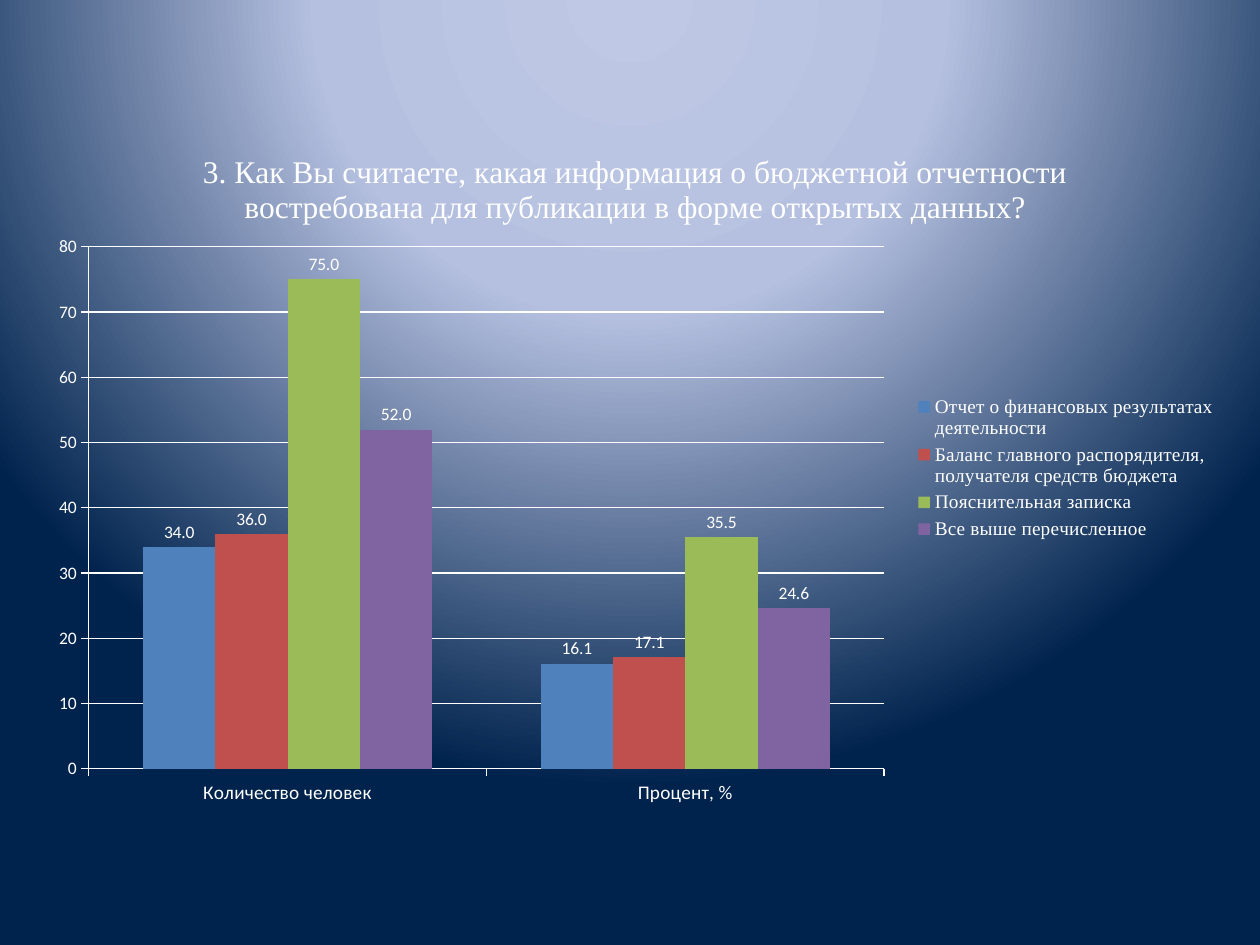
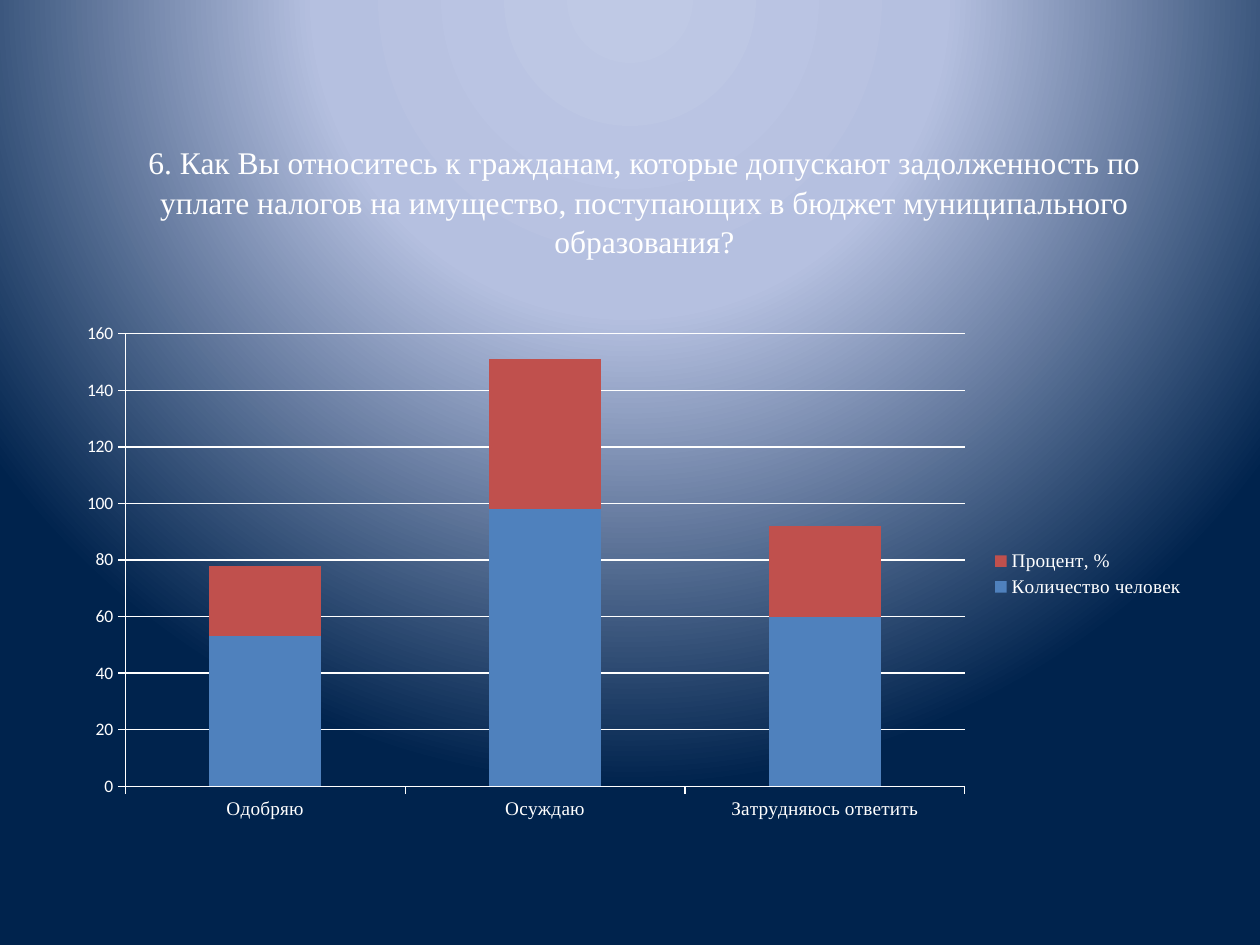
"""Builds two survey result slides with column charts on a radial gradient."""
from pptx import Presentation
from pptx.chart.data import CategoryChartData as Data
from pptx.dml.color import RGBColor as RGB
from pptx.enum.chart import XL_CHART_TYPE as Kind, XL_LABEL_POSITION as Spot
from pptx.enum.chart import XL_LEGEND_POSITION as Side, XL_TICK_MARK as Tick
from pptx.enum.text import MSO_ANCHOR as Anchor, PP_ALIGN as Align
from pptx.oxml import parse_xml
from pptx.oxml.ns import nsdecls, qn
from pptx.util import Inches, Pt

HUE = {"white": "FFFFFF", "glow": "BFC9E5", "mist": "B5C0E0", "navy": "00234D",
       "blue": "4F81BD", "red": "C0504D", "green": "9BBB59", "violet": "8064A2"}
SERIF, SANS = "Times New Roman", "Calibri"


def style(font, size, face):
    font.size, font.name, font.bold = Pt(size), face, False
    font.color.rgb = RGB.from_string(HUE["white"])


def place(node, index, box, inner=False):
    for old in node.findall(qn("c:layout")):
        node.remove(old)
    tags = '<c:layoutTarget val="inner"/>' if inner else ""
    tags += '<c:xMode val="edge"/><c:yMode val="edge"/>'
    tags += "".join(f'<c:{key} val="{val}"/>' for key, val in zip("xywh", box))
    node.insert(index, parse_xml(f'<c:layout {nsdecls("c")}><c:manualLayout>{tags}'
                                 '</c:manualLayout></c:layout>'))


prs = Presentation()
prs.slide_width, prs.slide_height = Inches(10), Inches(7.5)

master = prs.slide_master
master.background.fill.solid()
stops = "".join(f'<a:gs pos="{pos * 1000}"><a:srgbClr val="{HUE[name]}"/></a:gs>'
                for pos, name in ((0, "glow"), (40, "mist"), (100, "navy")))
grad = parse_xml(f'<a:gradFill {nsdecls("a")} rotWithShape="1"><a:gsLst>{stops}</a:gsLst>'
                 '<a:path path="circle"><a:fillToRect l="50000" t="-80000" r="50000" '
                 'b="180000"/></a:path></a:gradFill>')
solid = master.element.find(".//" + qn("p:bgPr")).find(qn("a:solidFill"))
solid.getparent().replace(solid, grad)

polls = [
    {"kind": Kind.COLUMN_CLUSTERED, "at": (0.28, 0.92, 9.45, 5.59),
     "head": "3. Как Вы считаете, какая информация о бюджетной отчетности "
             "востребована для публикации в форме открытых данных?",
     "cats": ["Количество человек", "Процент, %"], "face": SANS,
     "rows": [("Отчет о финансовых результатах деятельности", (34, 16.1), "blue"),
              ("Баланс главного распорядителя, получателя средств бюджета", (36, 17.1), "red"),
              ("Пояснительная записка", (75, 35.5), "green"),
              ("Все выше перечисленное", (52, 24.6), "violet")],
     "top": 80, "step": 10, "plot": (0.045, 0.186, 0.668, 0.741),
     "key": (0.733, 0.39, 0.265, 0.22)},
    {"kind": Kind.COLUMN_STACKED, "at": (0.51, 2.49, 8.98, 4.09),
     "head": "6. Как Вы относитесь к гражданам, которые допускают задолженность по "
             "уплате налогов на имущество, поступающих в бюджет муниципального образования?",
     "cats": ["Одобряю", "Осуждаю", "Затрудняюсь ответить"], "face": SERIF,
     "rows": [("Количество человек", (53, 98, 60), "blue"),
              ("Процент, %", (25, 53, 32), "red")],
     "top": 160, "step": 20, "plot": (0.054, 0.039, 0.742, 0.878),
     "key": (0.815, 0.45, 0.18, 0.11)},
]

for poll in polls:
    stack = poll["kind"] == Kind.COLUMN_STACKED
    slide = prs.slides.add_slide(prs.slide_layouts[5 if stack else 6])
    data = Data()
    data.categories = poll["cats"]
    for name, vals, _ in poll["rows"]:
        data.add_series(name, vals)
    box = [Inches(n) for n in poll["at"]]
    chart = slide.shapes.add_chart(poll["kind"], *box, data).chart
    style(chart.font, 10, SANS)

    if stack:
        chart.has_title = False
        title = slide.shapes.title
        title.left, title.top = Inches(0.98), Inches(1.07)
        title.width, title.height = Inches(8.27), Inches(1.01)
        frame = title.text_frame
        frame.vertical_anchor = Anchor.TOP
    else:
        chart.has_title = True
        frame = chart.chart_title.text_frame
    frame.text = poll["head"]
    para = frame.paragraphs[0]
    para.alignment = Align.CENTER
    style(para.font, 18, SERIF)
    if stack:
        para.line_spacing = 1.05
    else:
        place(chart.chart_title._element, 1, (0.136, 0.044))

    plot = chart.plots[0]
    plot.gap_width, plot.overlap = 150, 100 if stack else 0
    plot.vary_by_categories = False
    for bar, row in zip(plot.series, poll["rows"]):
        bar.format.fill.solid()
        bar.format.fill.fore_color.rgb = RGB.from_string(HUE[row[2]])
    if not stack:
        plot.has_data_labels = True
        tags = plot.data_labels
        tags.show_value, tags.position = True, Spot.OUTSIDE_END
        tags.number_format, tags.number_format_is_linked = "0.0", False
        style(tags.font, 10, SANS)

    cat, val = chart.category_axis, chart.value_axis
    val.minimum_scale, val.maximum_scale, val.major_unit = 0, poll["top"], poll["step"]
    val.has_major_gridlines = True
    val.tick_labels.number_format = "General"
    val.tick_labels.number_format_is_linked = False
    for axis in (cat, val):
        axis.major_tick_mark = Tick.OUTSIDE
    for part in (cat, val, val.major_gridlines):
        part.format.line.width = Pt(0.75)
        part.format.line.color.rgb = RGB.from_string(HUE["white"])
    style(cat.tick_labels.font, 11, poll["face"])
    style(val.tick_labels.font, 10, SANS)

    chart.has_legend = True
    chart.legend.position = Side.RIGHT
    chart.legend.include_in_layout = False
    style(chart.legend.font, 11, SERIF)
    place(chart.legend._element, 1, poll["key"])
    place(chart._chartSpace.chart.plotArea, 0, poll["plot"], inner=True)

prs.save("out.pptx")
